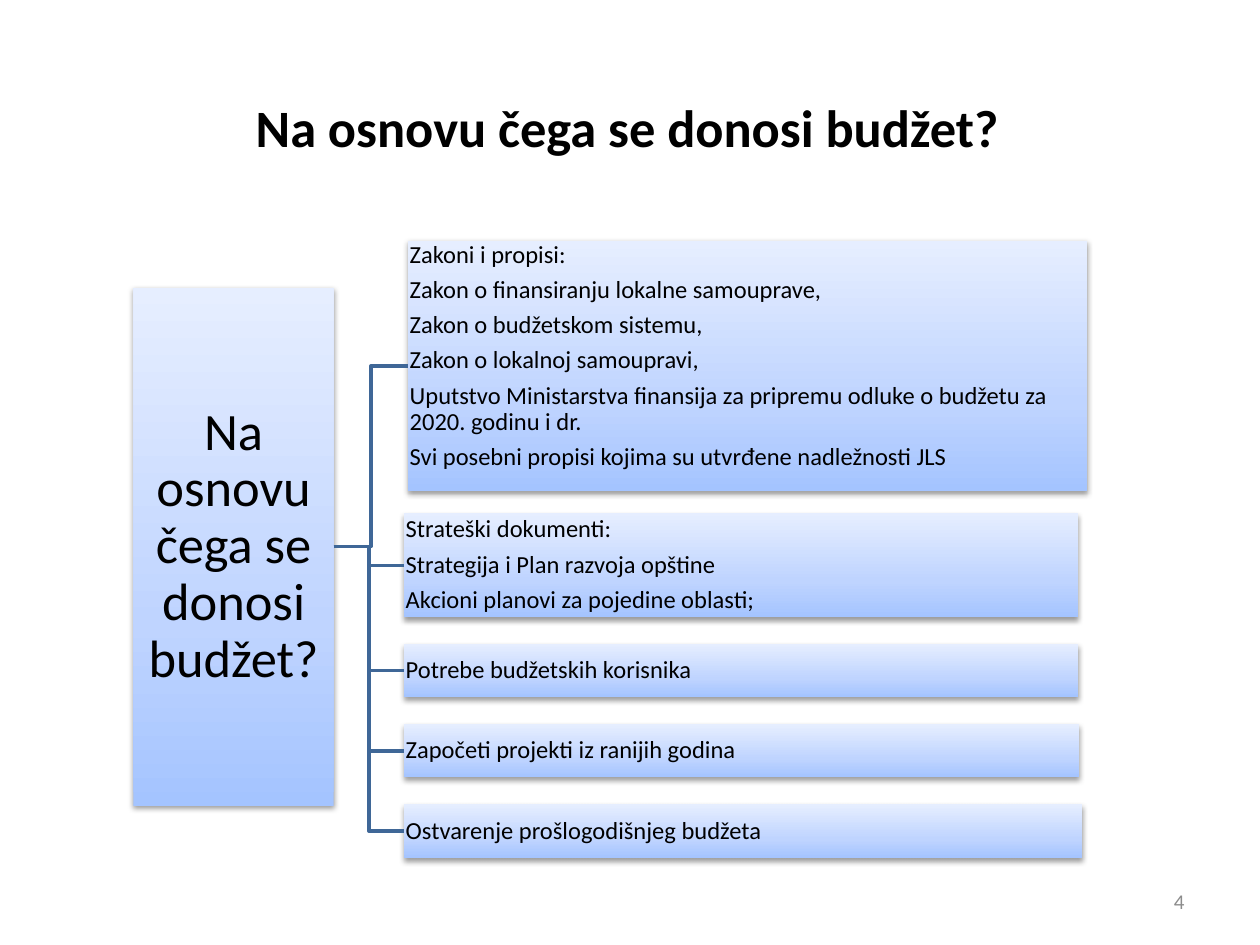
from copy import deepcopy
from lxml import etree
from pptx import Presentation
from pptx import util as u
from pptx.dml.color import RGBColor
from pptx.enum import shapes, text
from pptx.oxml.ns import qn

TITLE = "Na osnovu čega se donosi budžet?"
NUMBER = "4"
ROOT = (2.69, 5.8, 4.04, 10.44)
BRANCHES = [
    ((8.23, 4.85, 13.69, 5.05), "top", [
        "Zakoni i propisi:",
        "Zakon o finansiranju lokalne samouprave,",
        "Zakon o budžetskom sistemu,",
        "Zakon o lokalnoj samoupravi,",
        "Uputstvo Ministarstva finansija za pripremu odluke o budžetu za 2020. godinu i dr.",
        "Svi posebni propisi kojima su utvrđene nadležnosti JLS",
    ]),
    ((8.15, 10.34, 13.59, 2.11), "middle", [
        "Strateški dokumenti:",
        "Strategija i Plan razvoja opštine",
        "Akcioni planovi za pojedine oblasti;",
    ]),
    ((8.15, 12.98, 13.59, 1.07), "middle", ["Potrebe budžetskih korisnika"]),
    ((8.15, 14.6, 13.61, 1.07), "middle", ["Započeti projekti iz ranijih godina"]),
    ((8.15, 16.21, 13.67, 1.09), "middle", ["Ostvarenje prošlogodišnjeg budžeta"]),
]
THEME = {
    "font": "Calibri", "ink": "000000", "muted": "8C8C8C", "line": "3F6797",
    "gradient": [(0, "A4C4FF"), (0.35, "BFD4FF"), (1, "E6EEFF")],
    "large": 30, "body": 14, "small": 12,
}
ANCHORS = {"top": text.MSO_ANCHOR.TOP, "middle": text.MSO_ANCHOR.MIDDLE}
ALIGN = text.PP_ALIGN


def rgb(name):
    return RGBColor.from_string(THEME[name])


def assign(obj, values):
    for name, value in values.items():
        setattr(obj, name, value)


def place(sp, box):
    assign(sp, dict(zip(("left", "top", "width", "height"), map(u.Cm, box))))


def write(sp, lines, size, align, anchor="middle", ink="ink", bold=False, inset=None, para=None):
    tf = sp.text_frame
    assign(tf, {"word_wrap": True, "vertical_anchor": ANCHORS[anchor]})
    if inset is not None:
        sides = ("left", "top", "right", "bottom")
        assign(tf, {f"margin_{side}": u.Cm(inset) for side in sides})
    for i, line in enumerate(lines):
        p = tf.paragraphs[0] if i == 0 else tf.add_paragraph()
        assign(p, {"alignment": align, **(para or {})})
        r = p.add_run()
        r.text = line
        assign(r.font, {"name": THEME["font"], "size": u.Pt(THEME[size]), "bold": bold})
        r.font.color.rgb = rgb(ink)


def add_card(s, box, lines, size, align, anchor, inset):
    sp = s.shapes.add_shape(shapes.MSO_SHAPE.RECTANGLE, *map(u.Cm, box))
    sp.line.fill.background()
    sp.fill.gradient()
    sp.fill.gradient_angle = 90
    stops = sp._element.spPr.find(".//" + qn("a:gsLst"))
    stops.append(deepcopy(stops[-1]))
    for stop, (position, color) in zip(sp.fill.gradient_stops, THEME["gradient"]):
        stop.position = position
        stop.color.rgb = RGBColor.from_string(color)
    sp.shadow.inherit = False
    effects = sp._element.spPr.find(qn("a:effectLst"))
    shadow = etree.SubElement(effects, qn("a:outerShdw"), blurRad=str(u.Pt(3.1)),
                              dist=str(u.Pt(1.6)), dir="5400000", rotWithShape="0")
    color = etree.SubElement(shadow, qn("a:srgbClr"), val=THEME["ink"])
    etree.SubElement(color, qn("a:alpha"), val="38000")
    write(sp, lines, size, align, anchor, inset=inset,
          para={"line_spacing": 0.9, "space_after": u.Pt(5)})
    return sp


def join(s, root, branch):
    c = s.shapes.add_connector(shapes.MSO_CONNECTOR.ELBOW, 0, 0, 0, 0)
    c.begin_connect(root, 3)
    c.end_connect(branch, 1)
    c.line.width = u.Pt(2)
    c.line.color.rgb = rgb("line")
    etree.SubElement(c._element.spPr, qn("a:effectLst"))


def main():
    prs = Presentation()
    assign(prs, {"slide_width": u.Cm(25.4), "slide_height": u.Cm(19.05)})
    s = prs.slides.add_slide(prs.slide_layouts[5])
    title = s.shapes.title
    place(title, (1.22, 1.37, 22.86, 2.36))
    write(title, [TITLE], "large", ALIGN.CENTER, bold=True)
    number = s.shapes.add_textbox(*map(u.Cm, (18.21, 17.65, 5.92, 1.02)))
    write(number, [NUMBER], "small", ALIGN.RIGHT, ink="muted")
    root = add_card(s, ROOT, [TITLE], "large", ALIGN.CENTER, "middle", 0.05)
    for box, anchor, lines in BRANCHES:
        branch = add_card(s, box, lines, "body", ALIGN.LEFT, anchor, 0.03)
        join(s, root, branch)
    prs.save("out.pptx")


if __name__ == "__main__":
    main()
